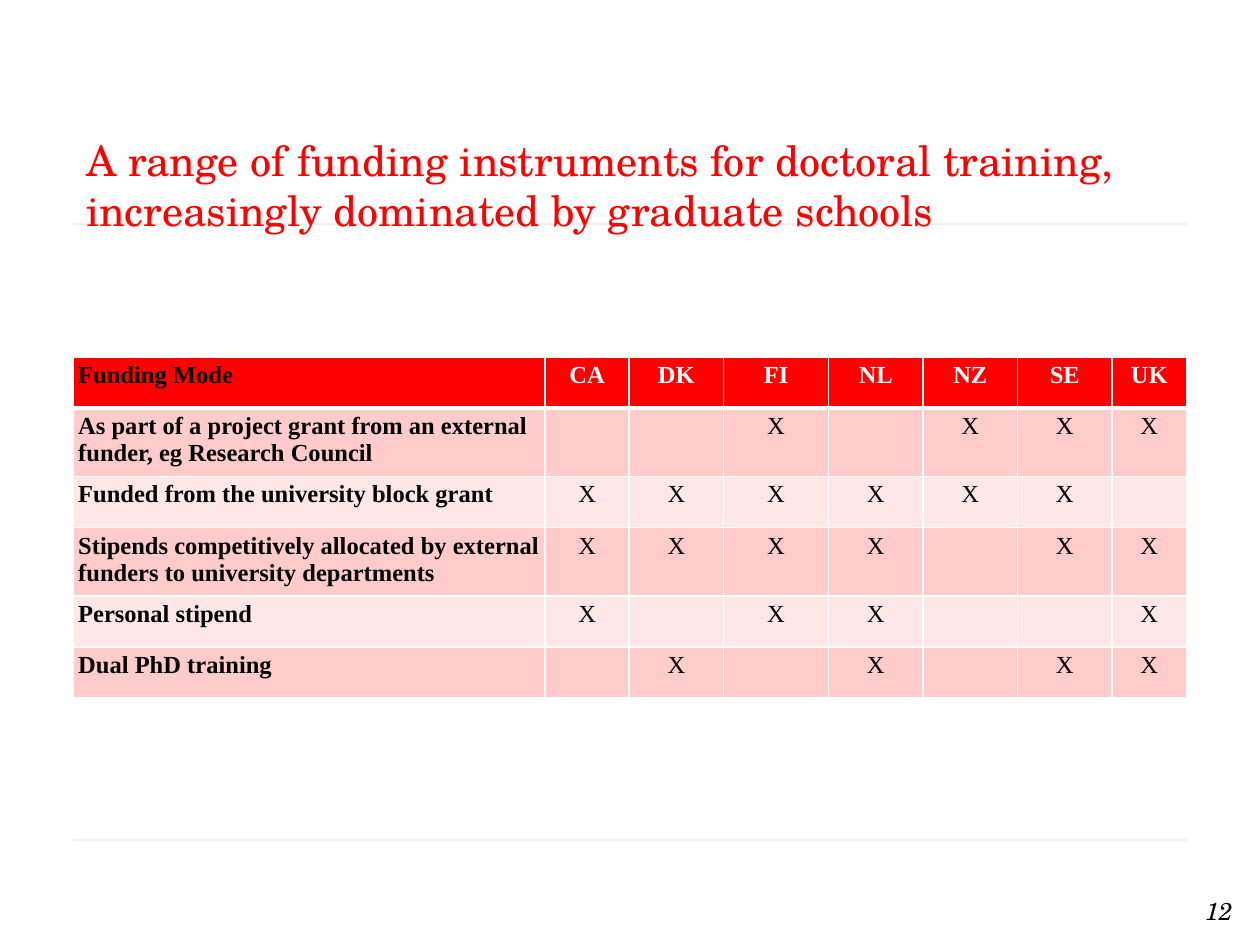
from dataclasses import dataclass

from lxml.etree import SubElement
from pptx import Presentation
from pptx.dml.color import RGBColor
from pptx.enum.shapes import MSO_CONNECTOR
from pptx.enum.text import MSO_ANCHOR, MSO_AUTO_SIZE, PP_ALIGN
from pptx.oxml.ns import qn
from pptx.slide import Slide
from pptx.table import _Cell
from pptx.util import Pt

SERIF = "Times New Roman"
SCHOOL = "TeX Gyre Schola"
LEFT, RIGHT = 42, 678
TABLE_TOP, ROW_HEIGHT, CELL_INSET = 204, 29.2, 2.7
COLUMN_WIDTHS = [269.5, 48, 54, 60, 54, 54, 54, 42.5]
COUNTRIES = ["CA", "DK", "FI", "NL", "NZ", "SE", "UK"]


@dataclass
class FundingMode:
    label: str
    countries: str


MODES = [
    FundingMode("As part of a project grant from an external funder, eg Research Council",
                "FI NZ SE UK"),
    FundingMode("Funded from the university block grant", "CA DK FI NL NZ SE"),
    FundingMode("Stipends competitively allocated by external funders to university departments",
                "CA DK FI NL SE UK"),
    FundingMode("Personal stipend", "CA FI NL UK"),
    FundingMode("Dual PhD training", "DK NL SE UK"),
]


def color(value: str) -> RGBColor:
    return RGBColor.from_string(value)


def style_text(frame, font: str, size: float, text_color: str,
               align=PP_ALIGN.LEFT, bold=False, italic=False) -> None:
    for para in frame.paragraphs:
        para.alignment = align
        for target in [para, *para.runs]:
            target.font.name = font
            target.font.size = Pt(size)
            target.font.bold = bold
            target.font.italic = italic
            target.font.color.rgb = color(text_color)


def draw_rule(page: Slide, top: float) -> None:
    rule = page.shapes.add_connector(MSO_CONNECTOR.STRAIGHT,
                                     Pt(LEFT), Pt(top), Pt(RIGHT), Pt(top))
    rule.line.width = Pt(0.5)
    rule.line.color.rgb = color("808080")
    properties = rule._element.spPr
    tint = properties.find(".//" + qn("a:srgbClr"))
    SubElement(tint, qn("a:alpha"), val="35000")
    SubElement(properties, qn("a:effectLst"))


def set_borders(cell: _Cell, top: float, bottom: float) -> None:
    properties = cell._tc.get_or_add_tcPr()
    for side, width in {"L": 1, "R": 1, "T": top, "B": bottom}.items():
        border = SubElement(properties, qn(f"a:ln{side}"), w=str(Pt(width)))
        fill = SubElement(border, qn("a:solidFill"))
        SubElement(fill, qn("a:srgbClr"), val="FFFFFF")


def fill_cell(cell: _Cell, text: str, row: int, column: int) -> None:
    is_header, is_label = row == 0, column == 0
    cell.text_frame.text = text
    style_text(cell.text_frame, SERIF, 14,
               "FFFFFF" if is_header and not is_label else "000000",
               PP_ALIGN.LEFT if is_label else PP_ALIGN.CENTER,
               bold=is_header or is_label)
    cell.margin_left = cell.margin_right = Pt(CELL_INSET)
    cell.margin_top = cell.margin_bottom = Pt(CELL_INSET)
    set_borders(cell, top=3 if row == 1 else 1, bottom=3 if is_header else 1)
    cell.fill.solid()
    band = "FFCBCB" if row % 2 else "FFE7E7"
    cell.fill.fore_color.rgb = color("FF0000" if is_header else band)


def draw_table(page: Slide) -> None:
    rows = [["Funding Mode", *COUNTRIES]]
    for mode in MODES:
        used = mode.countries.split()
        rows.append([mode.label, *("X" if name in used else "" for name in COUNTRIES)])
    table = page.shapes.add_table(
        len(rows), len(COLUMN_WIDTHS), Pt(LEFT), Pt(TABLE_TOP),
        Pt(sum(COLUMN_WIDTHS)), Pt(ROW_HEIGHT * len(rows))).table
    for column, width in zip(table.columns, COLUMN_WIDTHS):
        column.width = Pt(width)
    for row, texts in enumerate(rows):
        table.rows[row].height = Pt(ROW_HEIGHT)
        for column, text in enumerate(texts):
            fill_cell(table.cell(row, column), text, row, column)


def main() -> None:
    deck = Presentation()
    deck.slide_width, deck.slide_height = Pt(720), Pt(540)
    page = deck.slides.add_slide(deck.slide_layouts[5])

    # Rules above and below the content
    for top in (480, 128):
        draw_rule(page, top)

    # Page number
    number = page.shapes.add_textbox(Pt(626.5), Pt(508.3), Pt(85), Pt(24))
    number.text_frame.word_wrap = True
    number.text_frame.text = "12"
    style_text(number.text_frame, SCHOOL, 14, "000000", PP_ALIGN.RIGHT, italic=True)

    # Title
    title = page.shapes.title
    title.left, title.top, title.width, title.height = Pt(LEFT), Pt(84.5), Pt(636), Pt(42)
    frame = title.text_frame
    frame.text = ("A range of funding instruments for doctoral training, "
                  "increasingly dominated by graduate schools")
    frame.word_wrap = True
    frame.auto_size = MSO_AUTO_SIZE.NONE
    frame.vertical_anchor = MSO_ANCHOR.MIDDLE
    style_text(frame, SCHOOL, 24, "FF0000")

    # Funding modes by country
    draw_table(page)

    deck.save("out.pptx")


if __name__ == "__main__":
    main()
